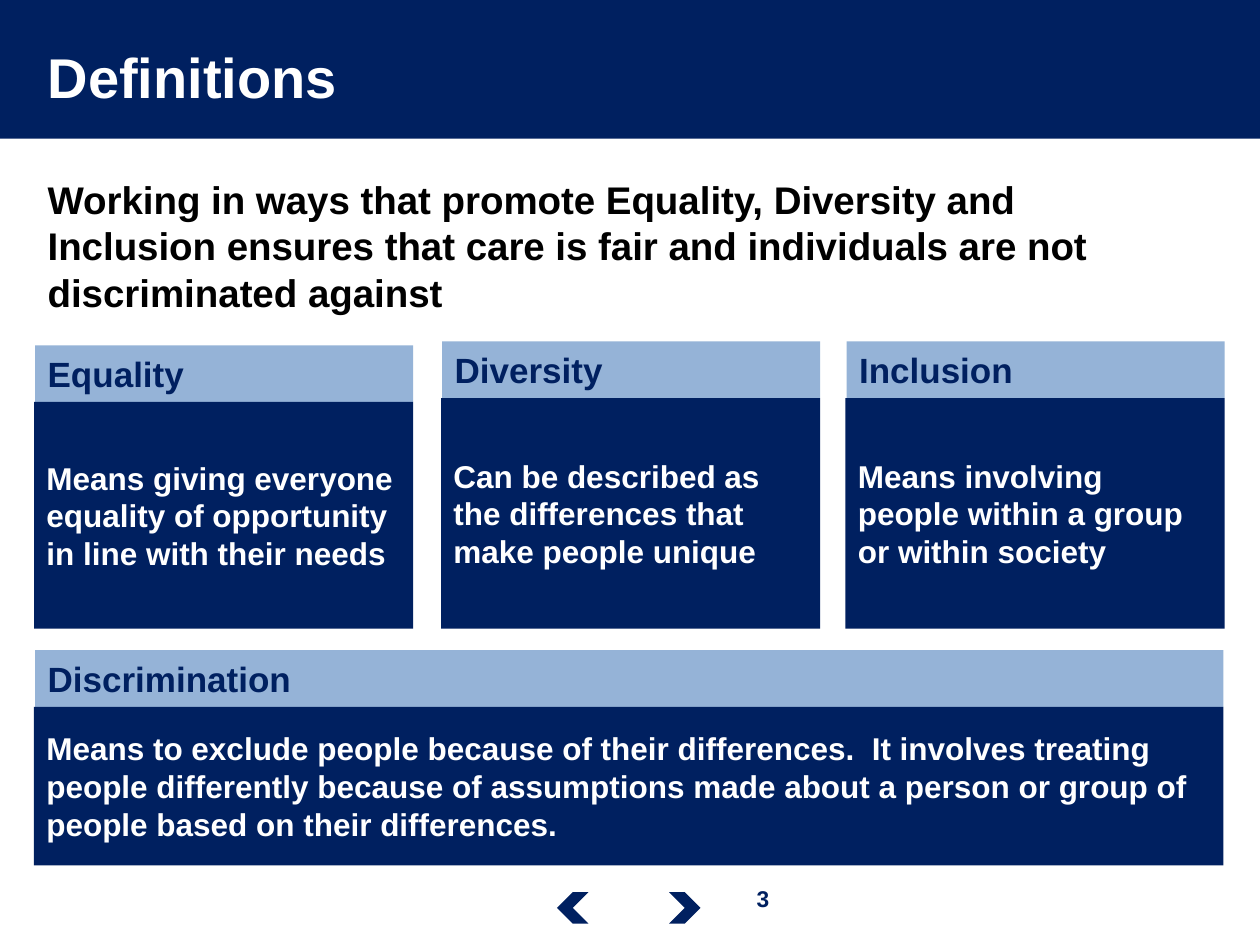
from dataclasses import dataclass

import pptx
import pptx.dml.color
import pptx.enum.shapes
import pptx.enum.text
import pptx.util
from pptx.util import Inches


@dataclass(frozen=True)
class Theme:
    font: str = "Arial"
    navy: str = "002060"
    pale: str = "95B3D7"
    white: str = "FFFFFF"
    black: str = "000000"
    title: int = 32
    intro: int = 22
    heading: int = 20
    body: int = 18
    number: int = 13


theme = Theme()
shapes = pptx.enum.shapes.MSO_SHAPE
anchors = pptx.enum.text.MSO_ANCHOR
aligns = pptx.enum.text.PP_ALIGN

deck = pptx.Presentation()
deck.slide_width, deck.slide_height = Inches(10), Inches(7.5)
page = deck.slides.add_slide(deck.slide_layouts[6])


def add_block(left, top, width, height, fill, kind=shapes.RECTANGLE):
    block = page.shapes.add_shape(
        kind, Inches(left), Inches(top), Inches(width), Inches(height))
    block.shadow.inherit = False
    block.fill.solid()
    block.fill.fore_color.rgb = pptx.dml.color.RGBColor.from_string(fill)
    block.line.fill.background()
    return block


def write(box, text, *, size, color, anchor=anchors.MIDDLE, align=aligns.LEFT):
    frame = box.text_frame
    frame.word_wrap = True
    frame.vertical_anchor = anchor
    para = frame.paragraphs[0]
    para.alignment = align
    span = para.add_run()
    span.text = text
    span.font.name = theme.font
    span.font.size = pptx.util.Pt(size)
    span.font.bold = True
    span.font.color.rgb = pptx.dml.color.RGBColor.from_string(color)


# Title band
add_block(-0.02, 0, 10.02, 1.1, theme.navy)
title = page.shapes.add_textbox(Inches(0.28), Inches(0.1), Inches(7.9), Inches(1.01))
write(title, "Definitions", size=theme.title, color=theme.white)

# Introduction
intro = page.shapes.add_textbox(Inches(0.28), Inches(1.35), Inches(9), Inches(1.36))
write(intro, "Working in ways that promote Equality, Diversity and Inclusion ensures "
      "that care is fair and individuals are not discriminated against",
      size=theme.intro, color=theme.black, anchor=anchors.TOP)

# Definition cards: left, top, heading width, bottom, heading, meaning
heading_height = 0.45
cards = [
    (0.28, 2.74, 3, 4.99, "Equality",
     "Means giving everyone equality of opportunity in line with their needs"),
    (3.51, 2.71, 3, 4.99, "Diversity",
     "Can be described as the differences that make people unique"),
    (6.72, 2.71, 3, 4.99, "Inclusion",
     "Means involving people within a group or within society"),
    (0.28, 5.16, 9.43, 6.87, "Discrimination",
     "Means to exclude people because of their differences.  It involves treating "
     "people differently because of assumptions made about a person or group of "
     "people based on their differences."),
]
for left, top, width, bottom, heading, meaning in cards:
    header = add_block(left, top, width, heading_height, theme.pale)
    write(header, heading, size=theme.heading, color=theme.navy)
    body_top = top + heading_height
    body = add_block(left - 0.01, body_top, width + 0.01, bottom - body_top, theme.navy)
    write(body, meaning, size=theme.body, color=theme.white)

# Navigation arrows and page number
for left, rotation in ((4.42, 180), (5.31, 0)):
    arrow = add_block(left, 7.08, 0.25, 0.25, theme.navy, shapes.CHEVRON)
    arrow.rotation = rotation
number = page.shapes.add_textbox(Inches(5.7), Inches(6.97), Inches(0.71), Inches(0.32))
write(number, "3", size=theme.number, color=theme.navy,
      anchor=anchors.TOP, align=aligns.CENTER)

deck.save("out.pptx")
